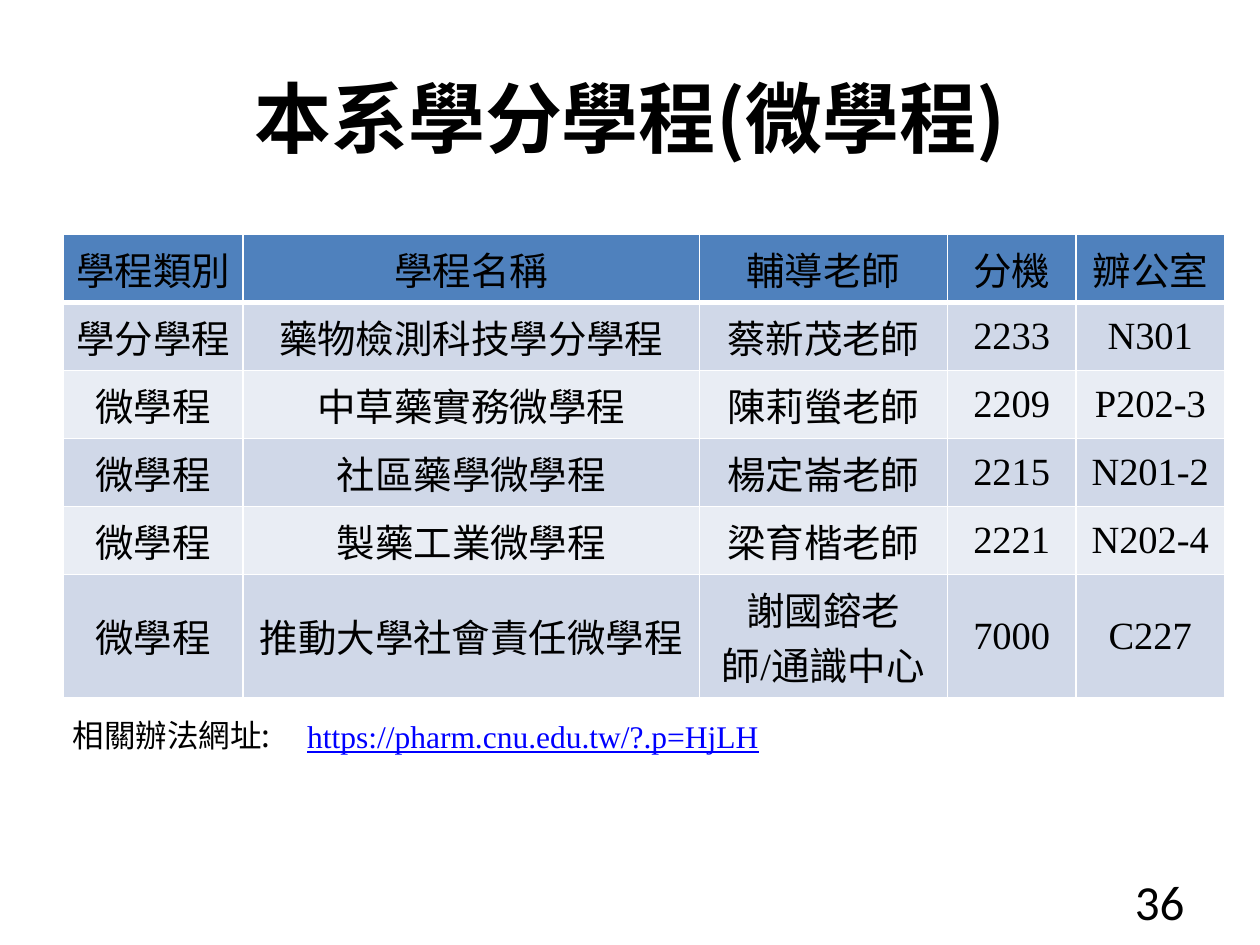
from lxml import etree
from pptx import Presentation, util as u
from pptx.dml.color import RGBColor
from pptx.enum import text
from pptx.oxml import ns

BLACK = RGBColor(0x00, 0x00, 0x00)
LINK_BLUE = RGBColor(0x00, 0x00, 0xFF)
WHITE = RGBColor(0xFF, 0xFF, 0xFF)
HEADER_BLUE = RGBColor(0x4F, 0x81, 0xBD)
BAND_DARK = RGBColor(0xD0, 0xD8, 0xE8)
BAND_LIGHT = RGBColor(0xE9, 0xED, 0xF4)

CJK = "Noto Sans CJK SC"
SERIF = "Times New Roman"
LEFT = text.PP_ALIGN.LEFT
CENTER = text.PP_ALIGN.CENTER
RIGHT = text.PP_ALIGN.RIGHT

COLUMN_WIDTHS = [1.43, 3.62, 1.97, 1.02, 1.18]
ROW_HEIGHTS = [0.54] * 5 + [0.98]
PROGRAMS = [
    ["學程類別", "學程名稱", "輔導老師", "分機", "辧公室"],
    ["學分學程", "藥物檢測科技學分學程", "蔡新茂老師", "2233", "N301"],
    ["微學程", "中草藥實務微學程", "陳莉螢老師", "2209", "P202-3"],
    ["微學程", "社區藥學微學程", "楊定崙老師", "2215", "N201-2"],
    ["微學程", "製藥工業微學程", "梁育楷老師", "2221", "N202-4"],
    ["微學程", "推動大學社會責任微學程", "謝國鎔老師/通識中心", "7000", "C227"],
]


def add_run(paragraph, words, size, font, color=BLACK, bold=False, underline=False):
    run = paragraph.add_run()
    run.text = words
    run.font.size = u.Pt(size)
    run.font.name = font
    run.font.bold = bold
    run.font.underline = underline
    run.font.color.rgb = color
    east_asian = etree.Element(ns.qn("a:ea"), typeface=CJK)
    run.font._element.find(ns.qn("a:latin")).addnext(east_asian)


def add_label(slide, place, words, size, font, align=LEFT, grow=False, **style):
    frame = slide.shapes.add_textbox(*map(u.Inches, place)).text_frame
    frame.word_wrap = not grow
    if grow:
        frame.auto_size = text.MSO_AUTO_SIZE.SHAPE_TO_FIT_TEXT
    else:
        frame.vertical_anchor = text.MSO_ANCHOR.MIDDLE
    paragraph = frame.paragraphs[0]
    paragraph.alignment = align
    add_run(paragraph, words, size, font, **style)


def set_borders(cell, widths):
    properties = cell._tc.get_or_add_tcPr()
    for index, (side, points) in enumerate(widths.items()):
        line = etree.Element(ns.qn(f"a:ln{side}"), w=str(u.Pt(points)))
        fill = etree.SubElement(line, ns.qn("a:solidFill"))
        etree.SubElement(fill, ns.qn("a:srgbClr"), val=str(WHITE))
        properties.insert(index, line)


def row_color(row):
    if row == 0:
        return HEADER_BLUE
    return BAND_DARK if row % 2 else BAND_LIGHT


def fill_cell(cell, row, words):
    cell.fill.solid()
    cell.fill.fore_color.rgb = row_color(row)
    cell.vertical_anchor = text.MSO_ANCHOR.MIDDLE
    paragraph = cell.text_frame.paragraphs[0]
    paragraph.alignment = CENTER
    add_run(paragraph, words, 22, SERIF)
    set_borders(cell, {"L": 1, "R": 1, "T": 3 if row == 1 else 1, "B": 3 if row == 0 else 1})


def add_program_table(slide, left, top):
    size = sum(COLUMN_WIDTHS), sum(ROW_HEIGHTS)
    table = slide.shapes.add_table(
        len(PROGRAMS), len(COLUMN_WIDTHS), *map(u.Inches, (left, top, *size))
    ).table
    for column, width in zip(table.columns, COLUMN_WIDTHS):
        column.width = u.Inches(width)
    for row, (program, height) in enumerate(zip(PROGRAMS, ROW_HEIGHTS)):
        table.rows[row].height = u.Inches(height)
        for column, words in enumerate(program):
            fill_cell(table.cell(row, column), row, words)


def main():
    deck = Presentation()
    deck.slide_width, deck.slide_height = u.Inches(10), u.Inches(7.5)
    slide = deck.slides.add_slide(deck.slide_layouts[6])
    add_label(slide, (0.5, 0.3, 9, 1.25), "本系學分學程(微學程)", 44, CJK, CENTER, bold=True)
    add_label(slide, (7.17, 6.95, 2.33, 0.4), "36", 28, "Calibri", RIGHT)
    add_program_table(slide, 0.5, 1.86)
    add_label(slide, (2.34, 5.64, 3.9, 0.71), "https://pharm.cnu.edu.tw/?.p=HjLH", 18, SERIF,
              grow=True, color=LINK_BLUE, underline=True)
    add_label(slide, (0.48, 5.63, 1.84, 0.4), "相關辦法網址:", 18, CJK, grow=True)
    deck.save("out.pptx")


if __name__ == "__main__":
    main()
